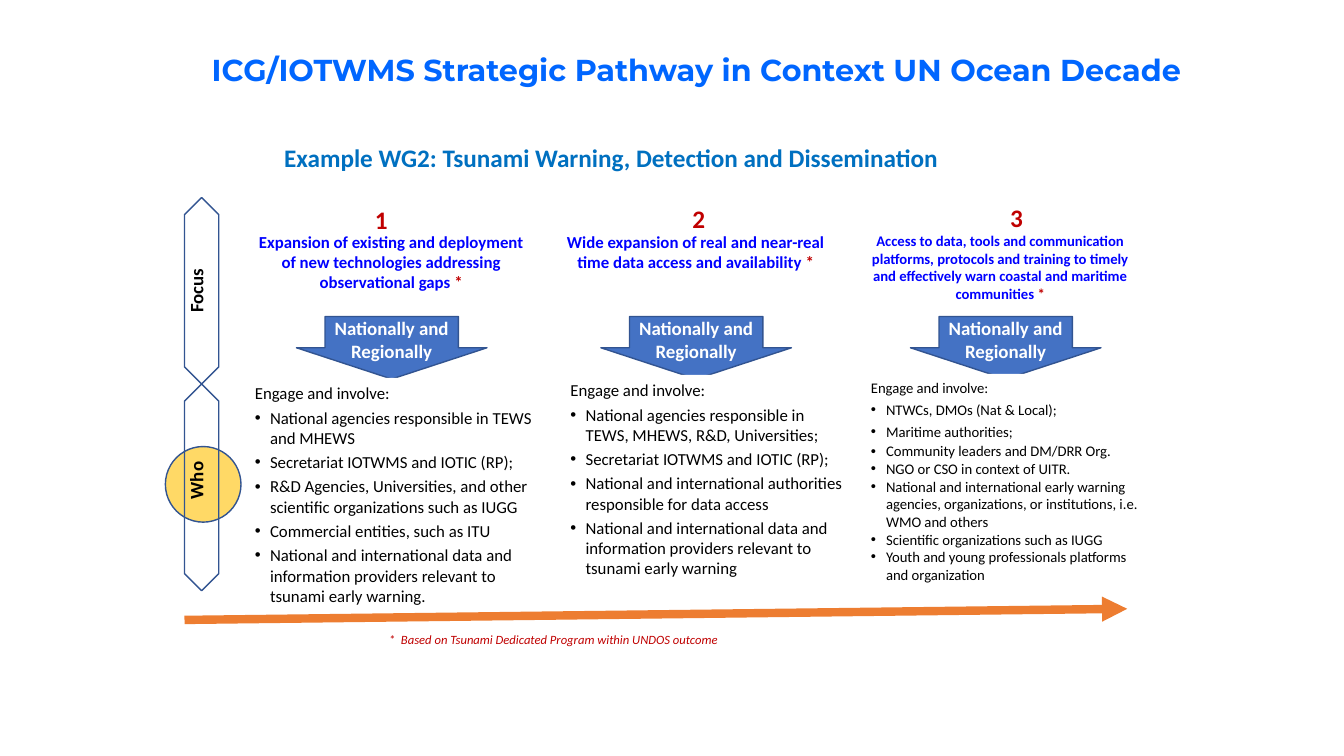
"""Build the strategic pathway slide with three focus columns."""
from lxml.etree import SubElement
from pptx import Presentation
from pptx.dml.color import RGBColor
from pptx.enum.shapes import MSO_CONNECTOR, MSO_SHAPE
from pptx.enum.text import MSO_ANCHOR, PP_ALIGN
from pptx.oxml.ns import qn
from pptx.util import Pt

PX = 9144
THEME = {
    "title": {"size": 21.6, "color": "0066FF", "bold": True, "name": "Montserrat"},
    "head": {"size": 18, "color": "0070C0", "bold": True},
    "number": {"size": 18, "color": "C00000", "bold": True},
    "focus": {"size": 12, "color": "0000FF", "bold": True},
    "arrow": {"size": 13.5, "color": "FFFFFF", "bold": True},
    "side": {"size": 13.5, "color": "000000", "bold": True},
    "body": {"size": 12, "color": "000000"},
    "note": {"size": 9, "color": "C00000", "italic": True},
    "small": 10.5,
    "line": "325491", "sun": "FFD966", "blue": "4472C4",
    "white": "FFFFFF", "track": "ED7D31",
}


def write(para, text, style, **extra):
    run = para.add_run()
    run.text = text
    look = {"name": "Calibri", **THEME[style], **extra}
    run.font.color.rgb = RGBColor.from_string(look.pop("color"))
    look["size"] = Pt(look["size"])
    for key, value in look.items():
        setattr(run.font, key, value)


def draw(kind, box, fill=None, line=None):
    area = [v * PX for v in box]
    if kind is None:
        shape = slide.shapes.add_textbox(*area)
    else:
        shape = slide.shapes.add_shape(kind, *area)
        shape.shadow.inherit = False
        if fill:
            shape.fill.solid()
            shape.fill.fore_color.rgb = RGBColor.from_string(THEME[fill])
        else:
            shape.fill.background()
        if line:
            shape.line.color.rgb = RGBColor.from_string(THEME[line])
            shape.line.width = Pt(1)
        else:
            shape.line.fill.background()
    shape.text_frame.word_wrap = True
    return shape


deck = Presentation()
deck.slide_width, deck.slide_height = 1333 * PX, 750 * PX
slide = deck.slides.add_slide(deck.slide_layouts[5])

draw(MSO_SHAPE.OVAL, (164, 443, 75, 75), "sun", "line")

title = slide.shapes.title
for key, value in {"left": 200, "top": 34, "width": 1075, "height": 75}.items():
    setattr(title, key, value * PX)
title.text_frame.vertical_anchor = MSO_ANCHOR.MIDDLE
para = title.text_frame.paragraphs[0]
para.alignment, para.line_spacing = PP_ALIGN.LEFT, 0.9
write(para, "ICG/IOTWMS Strategic Pathway in Context UN Ocean Decade", "title")

for text, style, box in [
    ("Example WG2: Tsunami Warning, Detection and Dissemination", "head",
     (272, 136, 753, 40)),
    ("*  Based on Tsunami Dedicated Program within UNDOS outcome", "note",
     (376, 622, 500, 25)),
]:
    write(draw(None, box).text_frame.paragraphs[0], text, style)

for word, top, tall, text_top, text_tall in [
    ("Focus", 196, 185, 252, 68),
    ("Who", 381, 205, 457, 48),
]:
    span = draw(MSO_SHAPE.UP_DOWN_ARROW, (183, top, 34, tall), line="line")
    guides = span._element.spPr.find(qn("a:prstGeom")).find(qn("a:avLst"))
    for guide in list(guides):
        guides.remove(guide)
    for name, value in {"adj1": 100000, "adj2": 50000}.items():
        SubElement(guides, qn("a:gd"), name=name, fmla=f"val {value}")
    label = draw(None, (178, text_top, 43, text_tall))
    label.rotation = 180
    label.text_frame.word_wrap = word == "Focus"
    label.text_frame._txBody.bodyPr.set("vert", "eaVert")
    write(label.text_frame.paragraphs[0], word, "side")

COLUMNS = [
    {"focus": "Expansion of existing and deployment of new technologies "
              "addressing observational gaps ",
     "size": 12, "tight": 9, "mid": 389,
     "number": (362, 198, 33, 40), "head": (239, 225, 298, 71),
     "body": (243, 375, 296, 240),
     "who": ["National agencies responsible in TEWS and MHEWS",
             "Secretariat IOTWMS and IOTIC (RP);",
             "R&D Agencies, Universities, and other scientific organizations such as IUGG",
             "Commercial entities, such as ITU",
             "National and international data and information providers "
             "relevant to tsunami early warning."]},
    {"focus": "Wide expansion of real and near-real time data access and availability ",
     "size": 12, "tight": 9, "mid": 691,
     "number": (677, 197, 33, 40), "head": (539, 225, 302, 50),
     "body": (556, 372, 293, 214),
     "who": ["National agencies responsible in TEWS, MHEWS, R&D, Universities;",
             "Secretariat IOTWMS and IOTIC (RP);",
             "National and international authorities responsible for data access",
             "National and international data and information providers "
             "relevant to tsunami early warning"]},
    {"focus": "Access to data, tools and communication platforms, protocols and "
              "training to timely and effectively warn coastal and maritime communities ",
     "size": THEME["small"], "tight": 3, "mid": 998,
     "number": (992, 196, 33, 40), "head": (843, 225, 298, 81),
     "body": (854, 371, 296, 219),
     "who": ["NTWCs, DMOs (Nat & Local);",
             "Maritime authorities;",
             "Community leaders and DM/DRR Org.",
             "NGO or CSO in context of UITR.",
             "National and international early warning agencies, organizations, "
             "or institutions, i.e. WMO and others",
             "Scientific organizations such as IUGG",
             "Youth and young professionals platforms and organization"]},
]

for count, col in enumerate(COLUMNS, 1):
    para = draw(None, col["head"]).text_frame.paragraphs[0]
    para.alignment = PP_ALIGN.CENTER
    write(para, col["focus"], "focus", size=col["size"])
    write(para, "*", "focus", size=col["size"], color=THEME["number"]["color"])
    write(draw(None, col["number"]).text_frame.paragraphs[0], str(count), "number")

    arrow = draw(MSO_SHAPE.DOWN_ARROW, (col["mid"] - 95, 314, 189, 62), "blue", "line")
    arrow.adjustments[0], arrow.adjustments[1] = 0.7, 0.5
    frame = draw(None, (col["mid"] - 87, 309, 173, 56)).text_frame
    frame.vertical_anchor = MSO_ANCHOR.MIDDLE
    frame.paragraphs[0].alignment = PP_ALIGN.CENTER
    write(frame.paragraphs[0], "Nationally and Regionally", "arrow")

    frame = draw(MSO_SHAPE.RECTANGLE, col["body"], "white").text_frame
    frame.vertical_anchor = MSO_ANCHOR.TOP
    for row, text in enumerate(["Engage and involve:"] + col["who"]):
        para = frame.add_paragraph() if row else frame.paragraphs[0]
        if row:
            props = para._p.get_or_add_pPr()
            props.set("marL", str(15 * PX))
            props.set("indent", str(-15 * PX))
            SubElement(props, qn("a:buFont"), typeface="Arial")
            SubElement(props, qn("a:buChar"), char="•")
        gap = Pt(1.5 if row < col["tight"] else 0)
        para.alignment = PP_ALIGN.LEFT
        para.space_before, para.space_after = gap if row else Pt(0), gap
        write(para, text, "body", size=col["size"])

track = slide.shapes.add_connector(
    MSO_CONNECTOR.STRAIGHT, *[v * PX for v in (183, 615, 1118, 604)])
track.line.color.rgb = RGBColor.from_string(THEME["track"])
track.line.width = Pt(6)
SubElement(track.line._get_or_add_ln(), qn("a:tailEnd"), type="triangle")
SubElement(track._element.spPr, qn("a:effectLst"))

deck.save("out.pptx")
